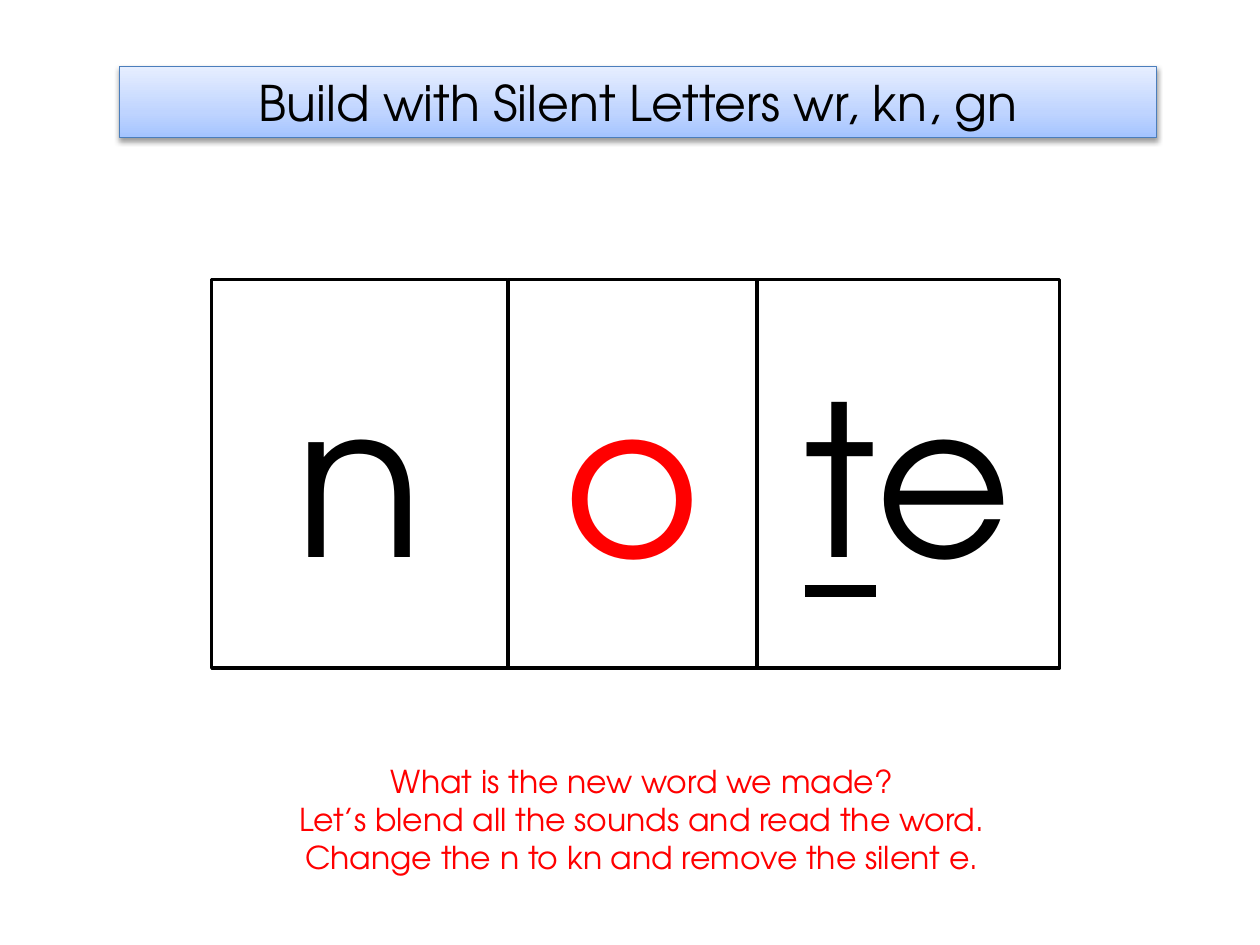
from pptx import Presentation
from pptx.dml.color import RGBColor
from pptx.enum.shapes import MSO_SHAPE
from pptx.enum.text import MSO_ANCHOR, MSO_AUTO_SIZE, PP_ALIGN
from pptx.oxml import parse_xml
from pptx.oxml.ns import nsdecls, qn
from pptx.util import Inches, Pt

RECT = MSO_SHAPE.RECTANGLE
TOP, MIDDLE = MSO_ANCHOR.TOP, MSO_ANCHOR.MIDDLE
CENTER = PP_ALIGN.CENTER
NO_FIT = MSO_AUTO_SIZE.NONE

FONT = "TeX Gyre Adventor"
COLORS = {"black": "000000", "white": "FFFFFF", "red": "FF0000", "border": "4B7EBC"}
BANNER_STOPS = [(0, "A4C4FF"), (35, "BFD4FF"), (100, "E6EEFF")]


def rgb(name):
    return RGBColor.from_string(COLORS[name])


def write(sp, lines, size, color="black", anchor=MIDDLE):
    """Each line is a list of (text, underlined) runs."""
    tf = sp.text_frame
    tf.word_wrap = True
    tf.auto_size = NO_FIT
    tf.vertical_anchor = anchor
    for i, runs in enumerate(lines):
        p = tf.paragraphs[0] if i == 0 else tf.add_paragraph()
        p.alignment = CENTER
        for text, underlined in runs:
            r = p.add_run()
            r.text = text
            r.font.name = FONT
            r.font.size = Pt(size)
            r.font.underline = underlined
            r.font.color.rgb = rgb(color)


def add_banner(s, text):
    sp = s.shapes.title
    sp.left, sp.top = Inches(0.95), Inches(0.53)
    sp.width, sp.height = Inches(8.23), Inches(0.56)
    sp.line.color.rgb = rgb("border")
    sp.line.width = Pt(0.75)
    # Three-stop gradient and soft shadow
    stops = "".join(
        f'<a:gs pos="{pos * 1000}"><a:srgbClr val="{color}"/></a:gs>'
        for pos, color in BANNER_STOPS)
    sp_pr = sp.element.spPr
    sp_pr.find(qn("a:ln")).addprevious(parse_xml(
        f'<a:gradFill {nsdecls("a")} rotWithShape="1"><a:gsLst>{stops}</a:gsLst>'
        '<a:lin ang="16200000" scaled="0"/></a:gradFill>'))
    sp_pr.append(parse_xml(
        f'<a:effectLst {nsdecls("a")}>'
        f'<a:outerShdw blurRad="{Pt(3.1)}" dist="{Pt(1.6)}" dir="5400000" rotWithShape="0">'
        f'<a:srgbClr val="{COLORS["black"]}"><a:alpha val="38000"/></a:srgbClr>'
        '</a:outerShdw></a:effectLst>'))
    write(sp, [[(text, False)]], 28)


def add_letter_box(s, left, width, runs, color):
    sp = s.shapes.add_shape(RECT, Inches(left), Inches(2.22), Inches(width), Inches(3.08))
    sp.shadow.inherit = False
    sp.fill.solid()
    sp.fill.fore_color.rgb = rgb("white")
    sp.line.color.rgb = rgb("black")
    sp.line.width = Pt(2)
    write(sp, [runs], 120, color)


def add_prompt(s, lines):
    sp = s.shapes.add_textbox(Inches(1.61), Inches(6), Inches(6.97), Inches(1.01))
    write(sp, [[(line, False)] for line in lines], 18, "red", TOP)


def main():
    prs = Presentation()
    prs.slide_width, prs.slide_height = Inches(10), Inches(7.5)
    s = prs.slides.add_slide(prs.slide_layouts[5])

    add_banner(s, "Build with Silent Letters wr, kn, gn")

    # Letter boxes stand side by side
    left = 1.68
    for width, runs, color in [
        (2.35, [("n", False)], "black"),
        (1.98, [("o", False)], "red"),
        (2.4, [("t", True), ("e", False)], "black"),
    ]:
        add_letter_box(s, left, width, runs, color)
        left += width

    add_prompt(s, [
        "What is the new word we made?",
        "Let’s blend all the sounds and read the word.",
        "Change the n to kn and remove the silent e.",
    ])
    prs.save("out.pptx")


if __name__ == "__main__":
    main()
